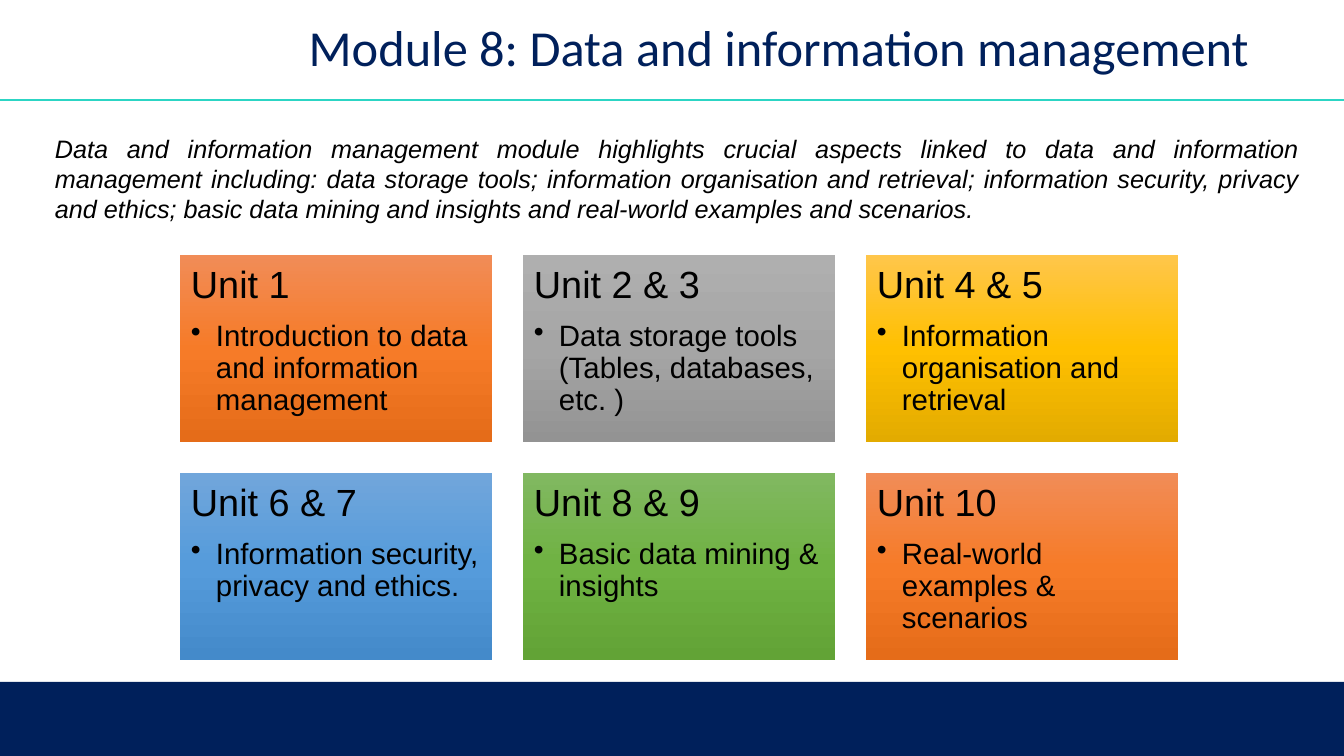
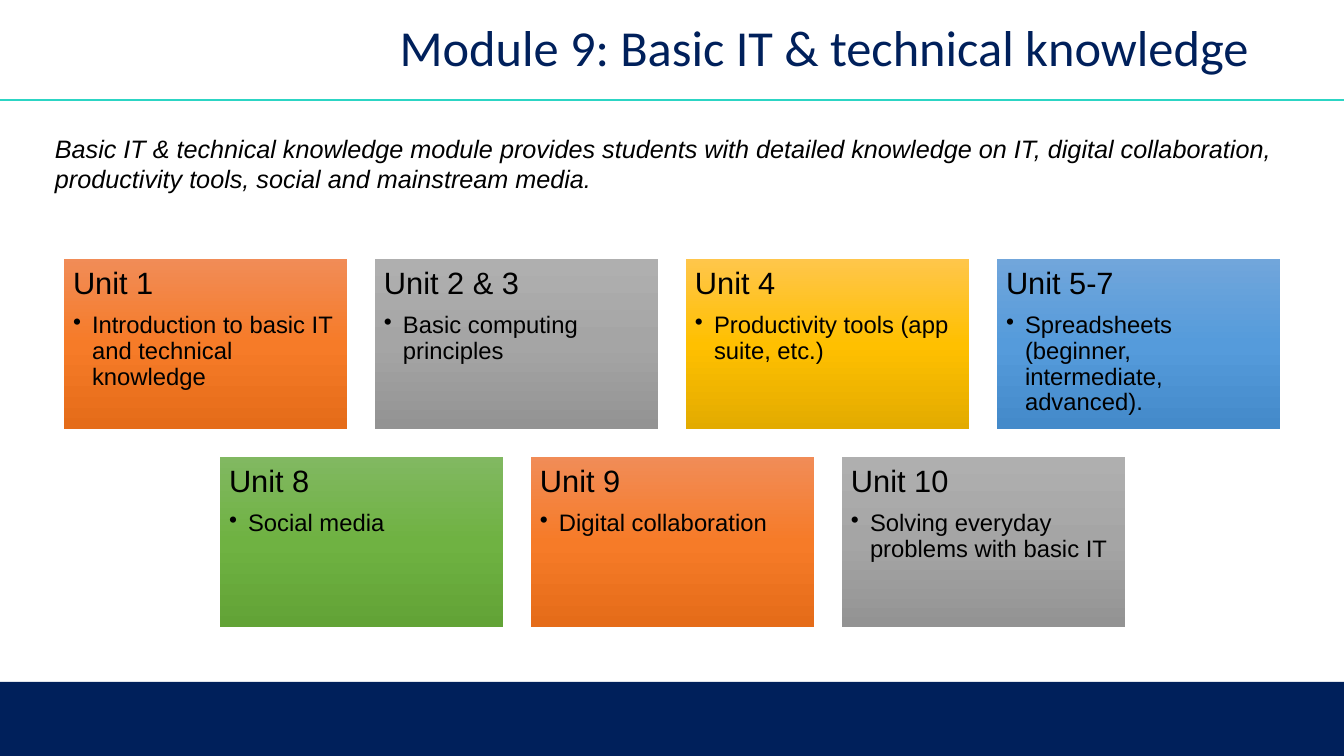
from copy import deepcopy
from dataclasses import dataclass

from lxml import etree
from pptx import Presentation
from pptx.dml.color import RGBColor
from pptx.enum.shapes import MSO_CONNECTOR, MSO_SHAPE
from pptx.enum.text import MSO_ANCHOR, MSO_AUTO_SIZE, PP_ALIGN
from pptx.oxml.ns import qn
from pptx.slide import Slide
from pptx.text.text import TextFrame
from pptx.util import Emu, Pt

EMU_PER_PX = 914400 / 100.8
SLIDE_W, SLIDE_H = 1344, 756
RULE_Y = 100
FOOTER_TOP = 682

RECTANGLE = MSO_SHAPE.RECTANGLE
STRAIGHT = MSO_CONNECTOR.STRAIGHT
TOP, MIDDLE = MSO_ANCHOR.TOP, MSO_ANCHOR.MIDDLE
FIT_SHAPE = MSO_AUTO_SIZE.SHAPE_TO_FIT_TEXT
LEFT, RIGHT, JUSTIFY = PP_ALIGN.LEFT, PP_ALIGN.RIGHT, PP_ALIGN.JUSTIFY

NAVY = RGBColor(0x00, 0x20, 0x5B)
TURQUOISE = RGBColor(0x2C, 0xD5, 0xC4)
BLACK = RGBColor(0x00, 0x00, 0x00)

Gradient = tuple[RGBColor, RGBColor, RGBColor]
ORANGE: Gradient = (RGBColor(0xF1, 0x8C, 0x57), RGBColor(0xF6, 0x7B, 0x28), RGBColor(0xE5, 0x6C, 0x19))
GREY: Gradient = (RGBColor(0xAF, 0xAF, 0xAF), RGBColor(0xA5, 0xA5, 0xA5), RGBColor(0x93, 0x93, 0x93))
GOLD: Gradient = (RGBColor(0xFF, 0xC6, 0x4B), RGBColor(0xFF, 0xC0, 0x00), RGBColor(0xE3, 0xAB, 0x00))
BLUE: Gradient = (RGBColor(0x71, 0xA6, 0xDB), RGBColor(0x55, 0x9B, 0xDB), RGBColor(0x44, 0x8A, 0xCA))
GREEN: Gradient = (RGBColor(0x81, 0xB8, 0x61), RGBColor(0x6F, 0xB2, 0x42), RGBColor(0x62, 0xA3, 0x36))
CARD_COLOURS = (ORANGE, GREY, GOLD, BLUE, GREEN)


@dataclass(frozen=True)
class Unit:
    heading: str
    topic: str


@dataclass(frozen=True)
class CardGrid:
    """Rows of equal cards, each row centred on centre_x; lengths in px, sizes in points."""
    columns: int
    centre_x: int
    top: int
    card_w: int
    card_h: int
    gap: int
    inset: int
    indent: int
    heading_size: int
    topic_size: int


@dataclass(frozen=True)
class Module:
    title: str
    intro: str
    intro_align: PP_ALIGN
    intro_h: int
    grid: CardGrid
    units: tuple[Unit, ...]


MODULES = (
    Module(
        "Module 8: Data and information management",
        "Data and information management module highlights crucial aspects linked to data and "
        "information management including: data storage tools; information organisation and "
        "retrieval; information security, privacy and ethics; basic data mining and insights "
        "and real-world examples and scenarios.",
        JUSTIFY, 102,
        CardGrid(3, 679, 255, 312, 187, 31, 11, 25, 27, 21),
        (
            Unit("Unit 1", "Introduction to data and information management"),
            Unit("Unit 2 & 3", "Data storage tools (Tables, databases, etc. )"),
            Unit("Unit 4 & 5", "Information organisation and retrieval"),
            Unit("Unit 6 & 7", "Information security, privacy and ethics."),
            Unit("Unit 8 & 9", "Basic data mining & insights"),
            Unit("Unit 10", "Real-world examples & scenarios"),
        ),
    ),
    Module(
        "Module 9: Basic IT & technical knowledge",
        "Basic IT & technical knowledge module provides students with detailed knowledge on IT, "
        "digital collaboration, productivity tools, social and mainstream media.",
        LEFT, 72,
        CardGrid(4, 672, 259, 283, 170, 28, 9, 19, 22, 17),
        (
            Unit("Unit 1", "Introduction to basic IT and technical knowledge"),
            Unit("Unit 2 & 3", "Basic computing principles"),
            Unit("Unit 4", "Productivity tools (app suite, etc.)"),
            Unit("Unit 5-7", "Spreadsheets (beginner, intermediate, advanced)."),
            Unit("Unit 8", "Social media"),
            Unit("Unit 9", "Digital collaboration"),
            Unit("Unit 10", "Solving everyday problems with basic IT"),
        ),
    ),
)


def px(length: int) -> Emu:
    return Emu(round(length * EMU_PER_PX))


def style(paragraph, size: int, colour: RGBColor = BLACK, face: str = "Arial",
          align: PP_ALIGN = LEFT) -> None:
    paragraph.alignment = align
    paragraph.font.size = Pt(size)
    paragraph.font.name = face
    paragraph.font.color.rgb = colour


def add_bullet(paragraph, indent: int) -> None:
    """Give the paragraph a hanging bullet."""
    properties = paragraph._p.get_or_add_pPr()
    properties.set("marL", str(px(indent)))
    properties.set("indent", str(-px(indent)))
    etree.SubElement(properties, qn("a:buChar"), char="•")


def add_text_box(slide: Slide, left: int, top: int, width: int, height: int) -> TextFrame:
    frame = slide.shapes.add_textbox(px(left), px(top), px(width), px(height)).text_frame
    frame.word_wrap = True
    return frame


def add_frame(slide: Slide) -> None:
    """Draw the rule under the title and the footer band."""
    rule = slide.shapes.add_connector(STRAIGHT, 0, px(RULE_Y), px(SLIDE_W), px(RULE_Y))
    rule.line.color.rgb = TURQUOISE
    rule.line.width = Pt(2)
    etree.SubElement(rule._element.spPr, qn("a:effectLst"))

    footer = slide.shapes.add_shape(
        RECTANGLE, 0, px(FOOTER_TOP), px(SLIDE_W), px(SLIDE_H - FOOTER_TOP))
    footer.shadow.inherit = False
    footer.fill.solid()
    footer.fill.fore_color.rgb = NAVY
    footer.line.fill.background()


def add_title(slide: Slide, title: str) -> None:
    frame = add_text_box(slide, 272, 14, 987, 73)
    frame.vertical_anchor = MIDDLE
    paragraph = frame.paragraphs[0]
    paragraph.text = title
    paragraph.line_spacing = 0.9
    style(paragraph, 36, NAVY, "Calibri", RIGHT)


def add_intro(slide: Slide, module: Module) -> None:
    frame = add_text_box(slide, 45, 128, 1264, module.intro_h)
    frame.auto_size = FIT_SHAPE
    paragraph = frame.paragraphs[0]
    paragraph.text = module.intro
    style(paragraph, 18, align=module.intro_align)
    paragraph.font.italic = True


def fill_downwards(shape, colours: Gradient) -> None:
    """Fill with three evenly spaced gradient stops, top to bottom."""
    shape.fill.gradient()
    shape.fill.gradient_angle = 270
    first_stop = shape._element.spPr.find(f".//{qn('a:gs')}")
    first_stop.addnext(deepcopy(first_stop))
    for stop, position, colour in zip(shape.fill.gradient_stops, (0, 0.5, 1), colours):
        stop.position = position
        stop.color.rgb = colour


def add_card(slide: Slide, grid: CardGrid, left: int, top: int, unit: Unit,
             colours: Gradient) -> None:
    card = slide.shapes.add_shape(
        RECTANGLE, px(left), px(top), px(grid.card_w), px(grid.card_h))
    card.shadow.inherit = False
    card.line.fill.background()
    fill_downwards(card, colours)

    frame = card.text_frame
    frame.word_wrap = True
    frame.vertical_anchor = TOP
    frame.margin_left = frame.margin_right = px(grid.inset)
    frame.margin_top = frame.margin_bottom = px(grid.inset)

    heading = frame.paragraphs[0]
    heading.text = unit.heading
    heading.space_after = Pt(round(grid.heading_size * 0.39, 1))
    topic = frame.add_paragraph()
    topic.text = unit.topic
    add_bullet(topic, grid.indent)
    for paragraph, size in ((heading, grid.heading_size), (topic, grid.topic_size)):
        paragraph.line_spacing = 0.9
        style(paragraph, size)


def add_cards(slide: Slide, grid: CardGrid, units: tuple[Unit, ...]) -> None:
    pitch_x, pitch_y = grid.card_w + grid.gap, grid.card_h + grid.gap
    for index, unit in enumerate(units):
        row, column = divmod(index, grid.columns)
        in_row = min(grid.columns, len(units) - row * grid.columns)
        row_left = grid.centre_x - (in_row * pitch_x - grid.gap) // 2
        add_card(slide, grid, row_left + column * pitch_x, grid.top + row * pitch_y,
                 unit, CARD_COLOURS[index % len(CARD_COLOURS)])


def main() -> None:
    presentation = Presentation()
    presentation.slide_width, presentation.slide_height = px(SLIDE_W), px(SLIDE_H)
    blank_layout = presentation.slide_layouts[6]
    for module in MODULES:
        slide = presentation.slides.add_slide(blank_layout)
        add_frame(slide)
        add_title(slide, module.title)
        add_cards(slide, module.grid, module.units)
        add_intro(slide, module)
    presentation.save("out.pptx")


if __name__ == "__main__":
    main()
